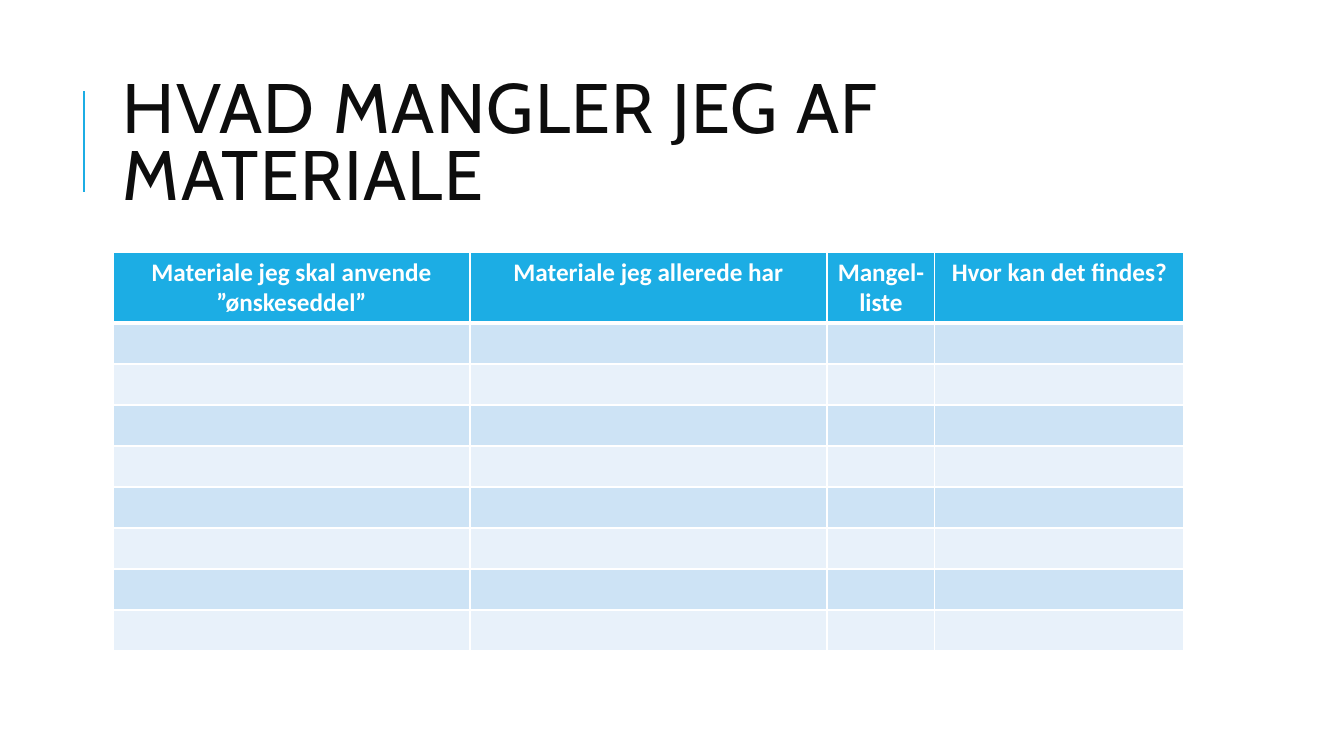
from lxml.etree import SubElement
from pptx import Presentation
from pptx.dml.color import RGBColor
from pptx.enum.shapes import MSO_CONNECTOR
from pptx.enum.text import MSO_ANCHOR, PP_ALIGN
from pptx.oxml.ns import qn
from pptx.util import Pt

SCALE = 12192000 / 1344
ACCENT, WHITE, INK = "1CADE4", "FFFFFF", "0D0D0D"
BANDS = ["CDE3F5", "E8F1FA"]
COLUMNS = [
    (357, ["Materiale jeg skal anvende", "”ønskeseddel”"]),
    (357, ["Materiale jeg allerede har"]),
    (108, ["Mangel-liste"]),
    (249, ["Hvor kan det findes?"]),
]
BODY_ROWS, HEADER_H, ROW_H = 8, 71, 41


def px(n):
    """Turn pixels into EMU."""
    return round(n * SCALE)


def color(value):
    """Turn a hex string into a colour."""
    return RGBColor.from_string(value)


def add_run(p, text, font, size, fill, bold=False):
    """Add one styled run to a paragraph."""
    r = p.add_run()
    r.text = text
    r.font.name, r.font.size, r.font.bold = font, Pt(size), bold
    r.font.color.rgb = color(fill)
    return r


def style_cell(cell, fill, top, bottom):
    """Give a cell white borders and a solid fill."""
    tcPr = cell._tc.get_or_add_tcPr()
    for side, width in (("L", 1), ("R", 1), ("T", top), ("B", bottom)):
        ln = SubElement(tcPr, qn(f"a:ln{side}"), w=str(Pt(width)))
        SubElement(SubElement(ln, qn("a:solidFill")), qn("a:srgbClr"), val=WHITE)
    cell.fill.solid()
    cell.fill.fore_color.rgb = color(fill)


def add_title(s, x, y, w, h):
    """Draw the heading and the accent line to its left."""
    line_x, line_y = px(x - 29), y + 27
    line = s.shapes.add_connector(
        MSO_CONNECTOR.STRAIGHT, line_x, px(line_y + 101), line_x, px(line_y))
    line.line.color.rgb = color(ACCENT)
    line.line.width = Pt(1.5)
    SubElement(line._element.spPr, qn("a:effectLst"))

    tf = s.shapes.add_textbox(px(x), px(y), px(w), px(h)).text_frame
    tf.word_wrap = True
    tf.vertical_anchor = MSO_ANCHOR.MIDDLE
    p = tf.paragraphs[0]
    p.line_spacing = 0.8
    r = add_run(p, "HVAD MANGLER JEG AF MATERIALE", "Cabin", 50, INK)
    r.font._element.set("spc", "100")


def add_material_table(s, x, y):
    """Draw the material table with its header and banded empty rows."""
    width = sum(w for w, _ in COLUMNS)
    height = HEADER_H + BODY_ROWS * ROW_H
    table = s.shapes.add_table(
        BODY_ROWS + 1, len(COLUMNS), px(x), px(y), px(width), px(height)).table
    for row in table.rows:
        row.height = px(ROW_H)
    table.rows[0].height = px(HEADER_H)
    for c, (w, lines) in enumerate(COLUMNS):
        table.columns[c].width = px(w)
        header = table.cell(0, c)
        style_cell(header, ACCENT, 1, 3)
        tf = header.text_frame
        for i, text in enumerate(lines):
            p = tf.add_paragraph() if i else tf.paragraphs[0]
            p.alignment = PP_ALIGN.CENTER
            add_run(p, text, "Calibri", 18, WHITE, True)
        for i in range(BODY_ROWS):
            style_cell(table.cell(i + 1, c), BANDS[i % 2], 1 if i else 3, 1)


def main():
    """Build and save the slide."""
    prs = Presentation()
    prs.slide_width, prs.slide_height = px(1344), px(756)
    s = prs.slides.add_slide(prs.slide_layouts[6])
    add_title(s, 113, 64, 1071, 165)
    add_material_table(s, 113, 252)
    prs.save("out.pptx")


if __name__ == "__main__":
    main()
